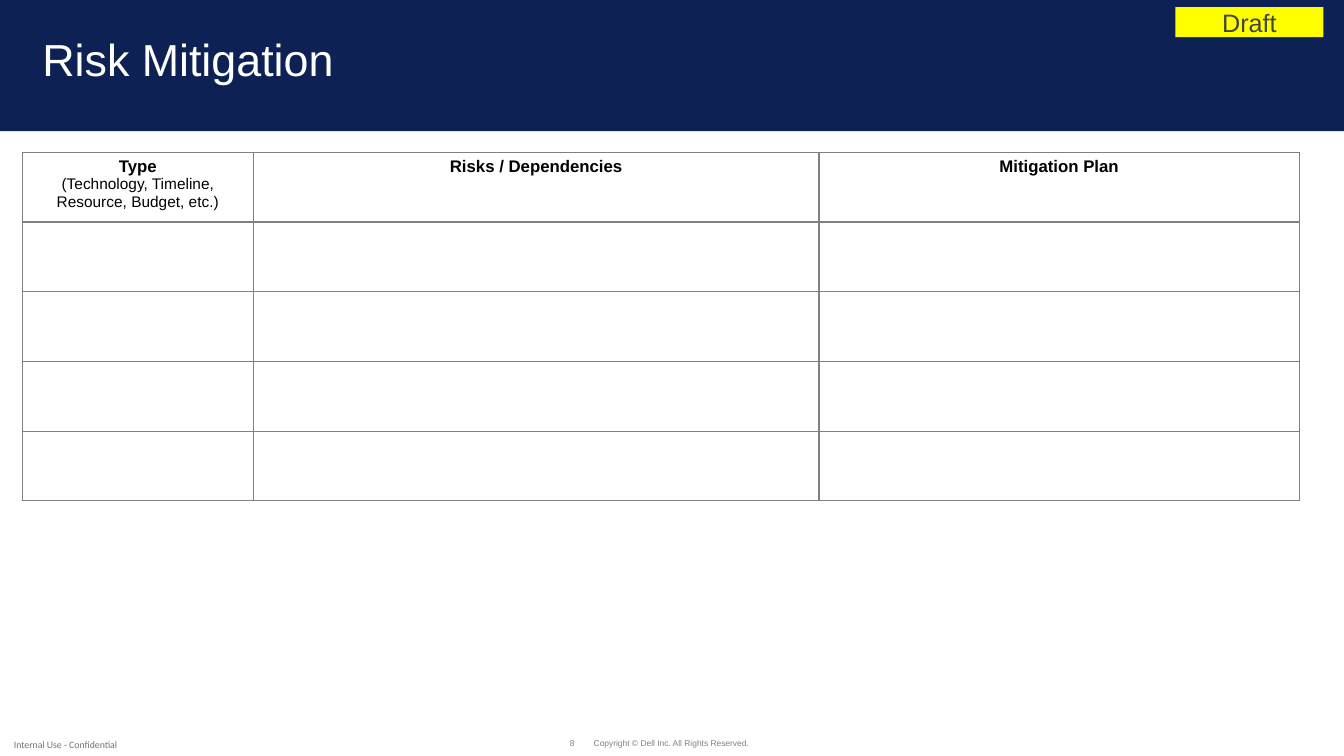
from dataclasses import dataclass
from lxml.etree import SubElement
from pptx import Presentation
from pptx.dml.color import RGBColor
from pptx.enum.shapes import MSO_SHAPE
from pptx.enum.text import MSO_ANCHOR, PP_ALIGN
from pptx.oxml.ns import qn
from pptx.slide import Slide
from pptx.table import _Cell
from pptx.text.text import TextFrame
from pptx.util import Inches, Length, Pt

COLORS = {
    "navy": "0D2155", "white": "FFFFFF", "yellow": "FFFF00",
    "dark": "444444", "gray": "808080", "ash": "737373", "black": "000000",
}
GRID = 0.1
COLS, ROWS = 133.33, 75


def units(count: float) -> Length:
    return Inches(count * GRID)


def color(name: str) -> RGBColor:
    return RGBColor.from_string(COLORS[name])


@dataclass
class Line:
    text: str
    size: float
    tint: str
    align: PP_ALIGN = PP_ALIGN.CENTER
    bold: bool = False
    font: str = "Arial"
    lead: float = 1.0


@dataclass
class Box:
    col: float
    row: float
    wide: float
    high: float
    line: Line | None = None
    fill: str | None = None
    anchor: MSO_ANCHOR = MSO_ANCHOR.MIDDLE
    wrap: bool = True


BOXES = [
    Box(58.8, 73.3, 15.6, 0.9, wrap=False,
        line=Line("Copyright © Dell Inc. All Rights Reserved.", 6, "gray", lead=0.9)),
    Box(56, 73.3, 1, 0.9, wrap=False,
        line=Line("8", 6, "gray", PP_ALIGN.RIGHT, lead=0.9)),
    Box(0, 72.7, 13, 2.3,
        line=Line("Internal Use - Confidential", 7, "ash", font="Calibri")),
    Box(0, -0.1, COLS, 13.1, fill="navy"),
    Box(4.2, 3.8, 125, 4.8, anchor=MSO_ANCHOR.TOP,
        line=Line("Risk Mitigation", 32, "white", PP_ALIGN.LEFT, lead=0.9)),
    Box(116.6, 0.7, 14.7, 3, Line("Draft", 18, "dark"), "yellow"),
]
HEADS = [
    [Line("Type", 12, "black", bold=True),
     Line("(Technology, Timeline, Resource, Budget, etc.)", 11, "black")],
    [Line("Risks / Dependencies", 12, "black", bold=True)],
    [Line("Mitigation Plan", 12, "black", bold=True)],
]
WIDTHS = [22.95, 56.1, 47.65]
COUNT, HEIGHT = 5, 6.92


def write(frame: TextFrame, lines: list[Line]) -> None:
    for index, line in enumerate(lines):
        para = frame.add_paragraph() if index else frame.paragraphs[0]
        para.text = line.text
        para.alignment = line.align
        para.line_spacing = line.lead
        font = para.font
        font.name, font.size, font.bold = line.font, Pt(line.size), line.bold
        font.color.rgb = color(line.tint)


def place(slide: Slide, box: Box) -> None:
    area = [units(side) for side in (box.col, box.row, box.wide, box.high)]
    if box.fill:
        shape = slide.shapes.add_shape(MSO_SHAPE.RECTANGLE, *area)
        shape.shadow.inherit = False
        shape.fill.solid()
        shape.fill.fore_color.rgb = color(box.fill)
        shape.line.fill.background()
    else:
        shape = slide.shapes.add_textbox(*area)
    if box.line:
        frame = shape.text_frame
        frame.margin_left = frame.margin_right = 0
        frame.margin_top = frame.margin_bottom = 0
        frame.word_wrap = box.wrap
        frame.vertical_anchor = box.anchor
        write(frame, [box.line])


def border(cell: _Cell) -> None:
    props = cell._tc.get_or_add_tcPr()
    for index, side in enumerate(("lnL", "lnR", "lnT", "lnB")):
        edge = SubElement(props, qn(f"a:{side}"), w=str(Pt(1)))
        fill = SubElement(edge, qn("a:solidFill"))
        SubElement(fill, qn("a:srgbClr"), val=COLORS["gray"])
        props.insert(index, edge)


def tabulate(slide: Slide) -> None:
    table = slide.shapes.add_table(
        COUNT, len(WIDTHS), units(2.2), units(15.1),
        units(sum(WIDTHS)), units(COUNT * HEIGHT)).table
    table.first_row = table.horz_banding = False
    for column, width in zip(table.columns, WIDTHS):
        column.width = units(width)
    for row in table.rows:
        row.height = units(HEIGHT)
    for cell in table.iter_cells():
        cell.fill.background()
        border(cell)
    for cell, lines in zip(table.rows[0].cells, HEADS):
        write(cell.text_frame, lines)


def main() -> None:
    deck = Presentation()
    deck.slide_width, deck.slide_height = units(COLS), units(ROWS)
    slide = deck.slides.add_slide(deck.slide_layouts[6])
    for box in BOXES:
        place(slide, box)
    tabulate(slide)
    deck.save("out.pptx")


if __name__ == "__main__":
    main()
